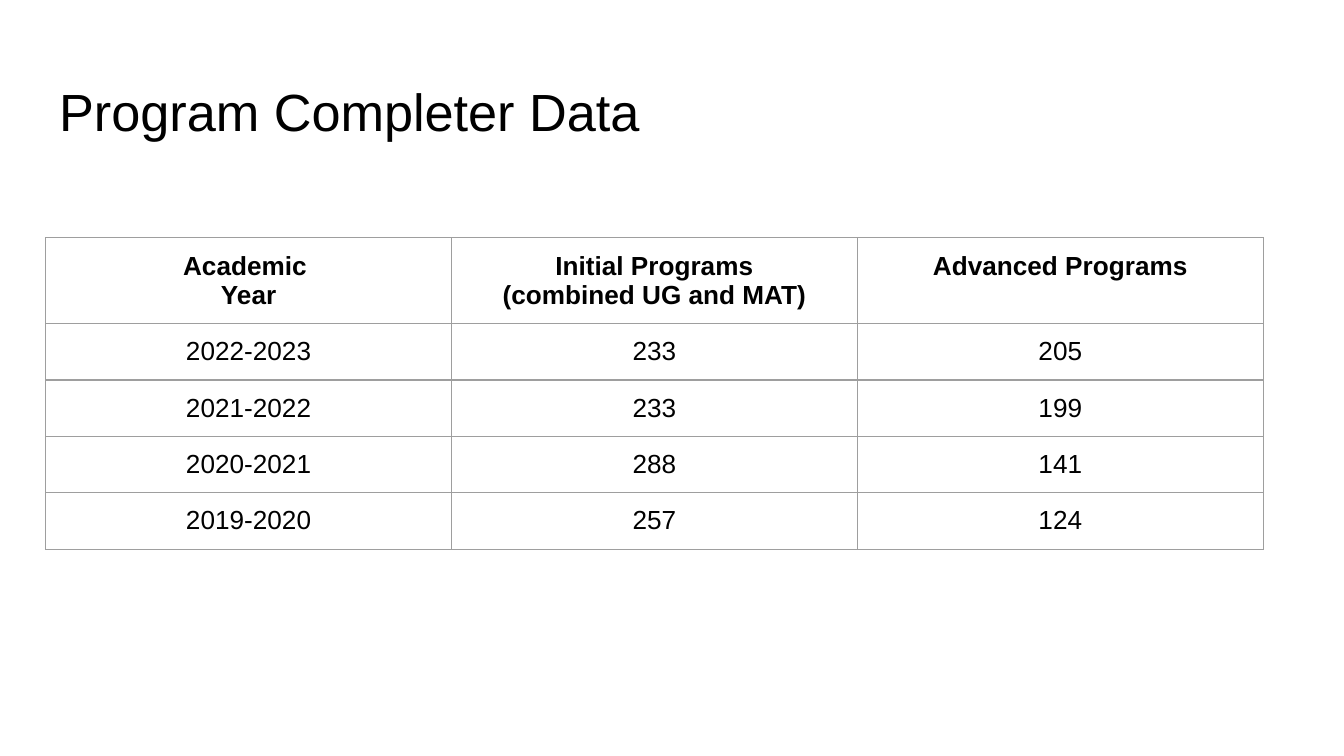
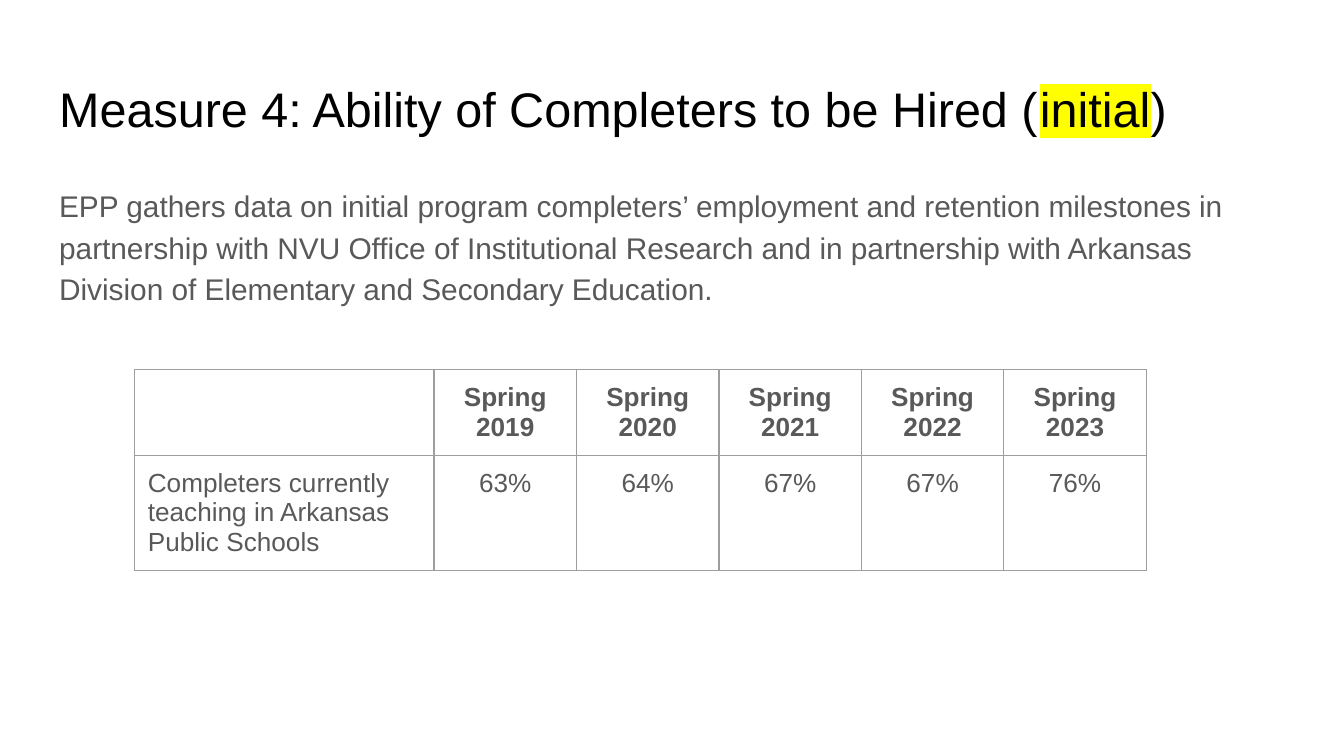
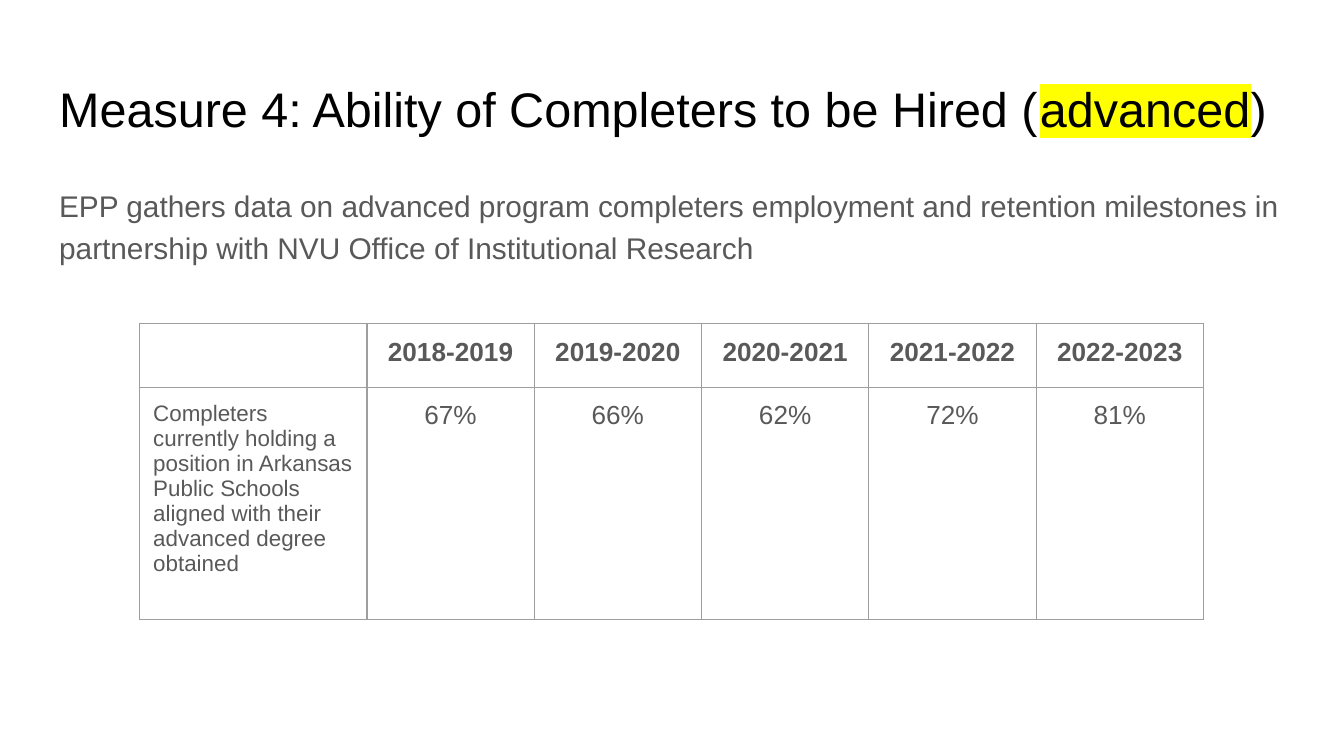
import pptx
import pptx.util
import pptx.dml.color
import pptx.enum.text
import pptx.oxml.ns

RGBColor = pptx.dml.color.RGBColor
ALIGN = pptx.enum.text.PP_ALIGN
qn = pptx.oxml.ns.qn

# Shared style
BLACK = RGBColor(0x00, 0x00, 0x00)
GREY = RGBColor(0x59, 0x59, 0x59)
BORDER = RGBColor(0x9E, 0x9E, 0x9E)
YELLOW = RGBColor(0xFF, 0xFF, 0x00)
FONT = "Arial"
COLUMNS = 100  # grid columns across the slide; rows are the same size
LEFT, TEXT_WIDTH = 3.4, 93.2
PADDING = 1


def sub(parent, tag, **attrs):
    """Add an XML child with its attributes and return it."""
    el = parent.makeelement(qn(tag), {k: str(v) for k, v in attrs.items()})
    parent.append(el)
    return el


def add_text(p, text, size=14, color=BLACK, bold=False, align=ALIGN.LEFT,
             highlight=None):
    """Add one formatted run to a paragraph."""
    p.alignment = align
    r = p.add_run()
    r.text = text
    r.font.size = pptx.util.Pt(size)
    r.font.bold = bold
    r.font.color.rgb = color
    r.font.name = FONT
    if highlight is not None:
        rPr = r.font._element
        mark = sub(rPr, "a:highlight")
        sub(mark, "a:srgbClr", val=highlight)
        rPr.find(qn("a:latin")).addprevious(mark)


class Deck:
    """The presentation, its grid and the current slide."""

    def __init__(self):
        self.prs = pptx.Presentation()
        self.prs.slide_width = pptx.util.Inches(10)
        self.prs.slide_height = self.prs.slide_width * 9 // 16
        self.s = None

    def grid(self, n):
        return pptx.util.Emu(round(self.prs.slide_width * n / COLUMNS))

    def slide(self, layout):
        self.s = self.prs.slides.add_slide(
            self.prs.slide_layouts.get_by_name(layout))

    def place(self, sp, top, height):
        """Move a placeholder onto the grid and return its text frame."""
        sp.left, sp.top = self.grid(LEFT), self.grid(top)
        sp.width, sp.height = self.grid(TEXT_WIDTH), self.grid(height)
        tf = sp.text_frame
        tf.word_wrap = True
        tf.auto_size = pptx.enum.text.MSO_AUTO_SIZE.NONE
        tf.vertical_anchor = pptx.enum.text.MSO_ANCHOR.TOP
        self.pad(tf)
        return tf

    def pad(self, box):
        for side in ("left", "right", "top", "bottom"):
            setattr(box, "margin_" + side, self.grid(PADDING))

    def title(self, text, size=26, marked=None):
        p = self.place(self.s.shapes.title, 4.9, 6.3).paragraphs[0]
        add_text(p, text, size=size)
        if marked:
            add_text(p, marked, size=size, highlight=YELLOW)
            add_text(p, ")", size=size)

    def body(self, text, height, space_after=0):
        p = self.place(self.s.placeholders[1], 12.6, height).paragraphs[0]
        add_text(p, text, size=16, color=GREY)
        p.line_spacing = 1.15
        p.space_before = pptx.util.Pt(0)
        p.space_after = pptx.util.Pt(space_after)
        pPr = p._p.get_or_add_pPr()
        pPr.set("marL", "0")
        pPr.set("indent", "0")
        sub(pPr, "a:buNone")

    def table(self, left, top, widths, heights, rows, color=GREY,
              label_size=14, label_align=ALIGN.LEFT):
        """Draw a ruled table with a bold first row and labels on the left."""
        frame = self.s.shapes.add_table(
            len(heights), len(widths), self.grid(left), self.grid(top),
            self.grid(sum(widths)), self.grid(sum(heights)))
        tbl = frame.table
        tbl.first_row = tbl.horz_banding = False
        for column, width in zip(tbl.columns, widths):
            column.width = self.grid(width)
        for row, height in zip(tbl.rows, heights):
            row.height = self.grid(height)
        for i, values in enumerate(rows):
            for j, value in enumerate(values):
                label = i > 0 and j == 0
                self.cell(tbl.cell(i, j), value, color=color, bold=i == 0,
                          size=label_size if label else 14,
                          align=label_align if label else ALIGN.CENTER)

    def cell(self, cell, value, size, **style):
        self.pad(cell)
        tcPr = cell._tc.get_or_add_tcPr()
        for edge in ("a:lnL", "a:lnR", "a:lnT", "a:lnB"):
            ln = sub(tcPr, edge, w=pptx.util.Pt(0.75))
            sub(sub(ln, "a:solidFill"), "a:srgbClr", val=BORDER)
        cell.fill.background()
        tf = cell.text_frame
        if not value:  # keep an empty cell from stretching its row
            sub(tf.paragraphs[0]._p, "a:endParaRPr", sz=size * 100)
            return
        for n, line in enumerate(value.split("\n")):
            p = tf.add_paragraph() if n else tf.paragraphs[0]
            add_text(p, line, size=size, **style)


def main():
    deck = Deck()

    # Completers by year
    deck.slide("Title Only")
    deck.title("Program Completer Data", size=28)
    deck.table(LEFT, 17.7, [30.2] * 3, [6.35] + [4.2] * 4, [
        ["Academic \nYear", "Initial Programs\n(combined UG and MAT)",
         "Advanced Programs"],
        ["2022-2023", "233", "205"],
        ["2021-2022", "233", "199"],
        ["2020-2021", "288", "141"],
        ["2019-2020", "257", "124"],
    ], color=BLACK, label_align=ALIGN.CENTER)

    # Hiring, initial programs
    measure = "Measure 4: Ability of Completers to be Hired ("
    deck.slide("Title and Content")
    deck.title(measure, marked="initial")
    deck.body("EPP gathers data on initial program completers’ employment and "
              "retention milestones in partnership with NVU Office of "
              "Institutional Research and in partnership with Arkansas "
              "Division of Elementary and Secondary Education.",
              37.4, space_after=16)
    deck.table(10, 27.5, [22.3] + [10.6] * 5, [6.35, 8.55], [
        [""] + [f"Spring {year}" for year in range(2019, 2024)],
        ["Completers currently teaching in Arkansas Public Schools",
         "63%", "64%", "67%", "67%", "76%"],
    ])

    # Hiring, advanced programs
    deck.slide("Title and Content")
    deck.title(measure, marked="advanced")
    deck.body("EPP gathers data on advanced program completers employment and "
              "retention milestones in partnership with NVU Office of "
              "Institutional Research", 8.7)
    deck.table(10.4, 24.1, [16.9] + [12.45] * 5, [4.75, 17.25], [
        [""] + [f"{year}-{year + 1}" for year in range(2018, 2023)],
        ["Completers currently holding a position in Arkansas Public Schools "
         "aligned with their advanced degree obtained",
         "67%", "66%", "62%", "72%", "81%"],
    ], label_size=12)

    deck.prs.save("out.pptx")


if __name__ == "__main__":
    main()
